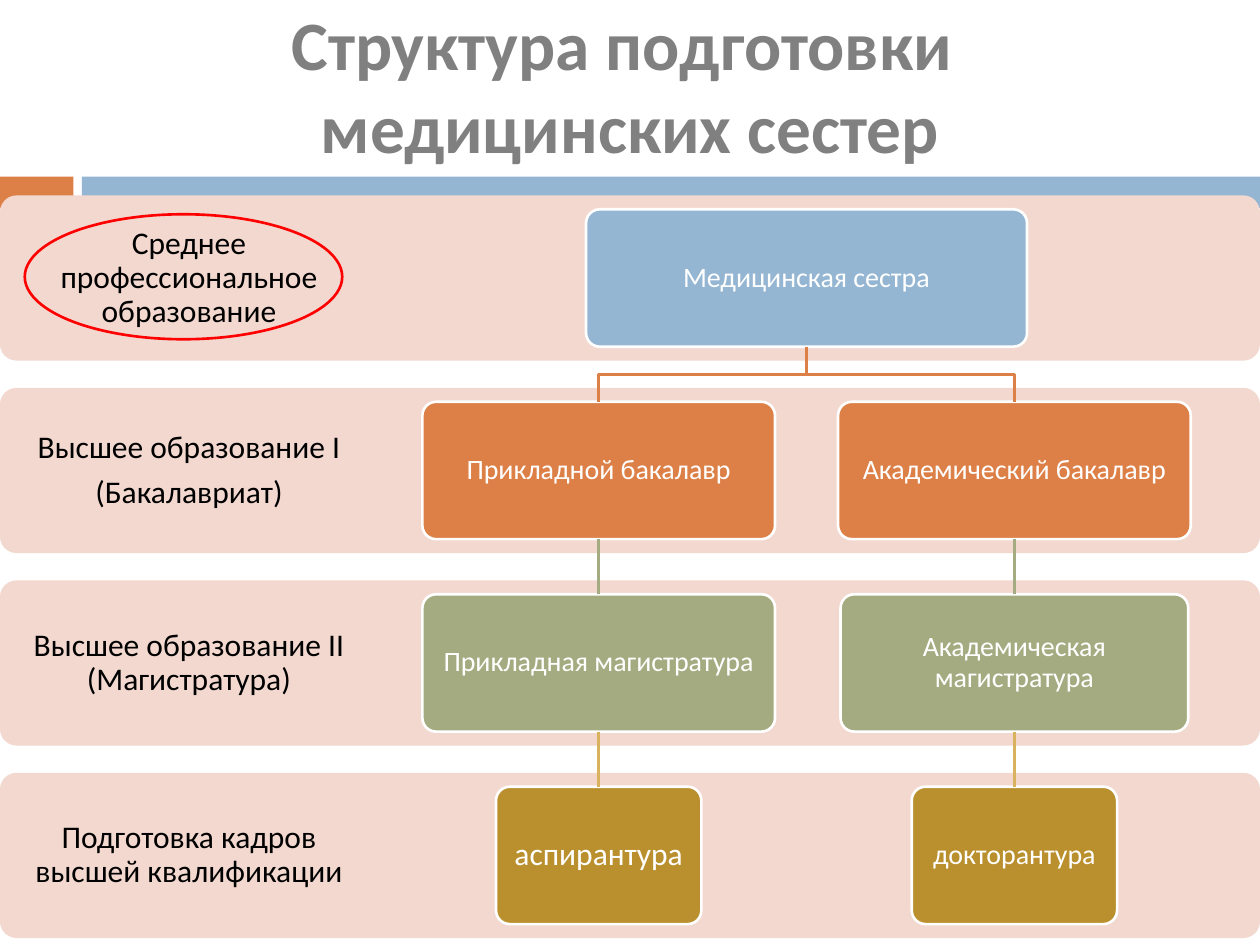
from dataclasses import dataclass

from lxml.etree import SubElement
from pptx import Presentation
from pptx.dml.color import RGBColor
from pptx.enum.shapes import MSO_CONNECTOR as Link, MSO_SHAPE as Preset
from pptx.enum.text import MSO_ANCHOR as Anchor, MSO_AUTO_SIZE as AutoSize, PP_ALIGN as Align
from pptx.oxml.ns import qn
from pptx.util import Cm, Pt


@dataclass(frozen=True)
class Theme:
    font: str = "Calibri"
    title_size: float = 39.6
    label_size: float = 18
    node_size: float = 16
    line_width: float = 1.5
    title: str = "808080"
    band: str = "F2D8CF"
    label: str = "000000"
    white: str = "FFFFFF"
    blue: str = "94B6D2"
    orange: str = "DD8047"
    green: str = "A5AB81"
    sand: str = "D8B25C"
    gold: str = "BA8F2D"
    highlight: str = "FF0000"


class StructureSlide:
    def __init__(self, slide, theme):
        self.slide = slide
        self.shapes = slide.shapes
        self.theme = theme

    def set_text(self, frame, text, size, color, inset=0.0, bold=False, spacing=None):
        frame.text = text
        frame.word_wrap = True
        frame.auto_size = AutoSize.NONE
        frame.vertical_anchor = Anchor.MIDDLE
        frame.margin_left = frame.margin_right = Cm(inset)
        frame.margin_top = frame.margin_bottom = Cm(inset)
        for paragraph in frame.paragraphs:
            paragraph.alignment = Align.CENTER
            paragraph.line_spacing = spacing
            if spacing:
                paragraph.space_after = Pt(0.35 * size)
            paragraph.font.name = self.theme.font
            paragraph.font.size = Pt(size)
            paragraph.font.bold = bold
            paragraph.font.color.rgb = RGBColor.from_string(color)

    def stroke(self, line, color):
        line.color.rgb = RGBColor.from_string(color)
        line.width = Pt(self.theme.line_width)

    def title(self, text, left, top, width, height):
        heading = self.shapes.title
        heading.left, heading.top = Cm(left), Cm(top)
        heading.width, heading.height = Cm(width), Cm(height)
        self.set_text(heading.text_frame, text, self.theme.title_size, self.theme.title, bold=True)

    def block(self, preset, left, top, width, height, fill=None, line=None):
        block = self.shapes.add_shape(preset, Cm(left), Cm(top), Cm(width), Cm(height))
        block.shadow.inherit = False
        if preset == Preset.ROUNDED_RECTANGLE:
            block.adjustments[0] = 0.1
        if fill:
            block.fill.solid()
            block.fill.fore_color.rgb = RGBColor.from_string(fill)
        else:
            block.fill.background()
        if line:
            self.stroke(block.line, line)
        else:
            block.line.fill.background()
        return block

    def label(self, text, left, top, width, height):
        label = self.shapes.add_textbox(Cm(left), Cm(top), Cm(width), Cm(height))
        self.set_text(label.text_frame, text, self.theme.label_size, self.theme.label, 0.36, spacing=0.9)

    def node(self, text, center, top, width, height, fill, size):
        node = self.block(Preset.ROUNDED_RECTANGLE, center - width / 2, top, width, height,
                          fill, self.theme.white)
        self.set_text(node.text_frame, text, size, self.theme.white, 0.18, spacing=0.9)
        return node

    def branch(self, parent, child, color):
        start_x, end_x = (box.left + box.width // 2 for box in (parent, child))
        start_y = parent.top + parent.height
        middle_y = (start_y + child.top) // 2
        builder = self.shapes.build_freeform(start_x, start_y)
        builder.add_line_segments([(start_x, middle_y), (end_x, middle_y), (end_x, child.top)],
                                  close=False)
        branch = builder.convert_to_shape()
        branch.shadow.inherit = False
        branch.fill.background()
        self.stroke(branch.line, color)

    def link(self, parent, child, color):
        link = self.shapes.add_connector(Link.STRAIGHT, 0, 0, 0, 0)
        link.begin_connect(parent, 2)
        link.end_connect(child, 0)
        self.stroke(link.line, color)
        SubElement(link._element.spPr, qn("a:effectLst"))


def main():
    theme = Theme()
    deck = Presentation()
    deck.slide_width, deck.slide_height = Cm(25.4), Cm(19.05)
    page = StructureSlide(deck.slides.add_slide(deck.slide_layouts[5]), theme)

    page.title("Структура подготовки \vмедицинских сестер", 1.27, 0, 22.86, 3.4)
    page.block(Preset.RECTANGLE, 0, 3.56, 1.48, 0.64, theme.orange)
    page.block(Preset.RECTANGLE, 1.65, 3.56, 23.75, 0.64, theme.blue)

    band_top, band_height, row_step = 3.94, 3.33, 3.88
    node_offset, node_height = 0.28, 2.77
    levels = [
        "Среднее профессиональное образование",
        "Высшее образование I\n(Бакалавриат)",
        "Высшее образование II (Магистратура)",
        "Подготовка кадров высшей квалификации",
    ]
    for row, level in enumerate(levels):
        top = band_top + row * row_step
        page.block(Preset.ROUNDED_RECTANGLE, 0, top, 25.4, band_height, theme.band)
        page.label(level, 0, top, 7.62, band_height)

    def place(text, row, center, width, fill, size=theme.node_size):
        top = band_top + node_offset + row * row_step
        return page.node(text, center, top, width, node_height, fill, size)

    nurse = place("Медицинская сестра", 0, 16.26, 8.89, theme.blue)
    fills = [theme.orange, theme.green, theme.gold]
    link_colors = [theme.orange, theme.green, theme.sand]
    tracks = [
        (12.07, [("Прикладной бакалавр", 7.11, theme.node_size),
                 ("Прикладная магистратура", 7.11, theme.node_size),
                 ("аспирантура", 4.14, theme.label_size)]),
        (20.45, [("Академический бакалавр", 7.11, theme.node_size),
                 ("Академическая магистратура", 7.01, theme.node_size),
                 ("докторантура", 4.14, theme.node_size)]),
    ]
    for center, stages in tracks:
        parent = nurse
        for row, (text, width, size) in enumerate(stages, start=1):
            child = place(text, row, center, width, fills[row - 1], size)
            connect = page.branch if parent is nurse else page.link
            connect(parent, child, link_colors[row - 1])
            parent = child

    page.block(Preset.OVAL, 0.5, 4.32, 6.4, 2.52, line=theme.highlight)
    deck.save("out.pptx")


if __name__ == "__main__":
    main()
